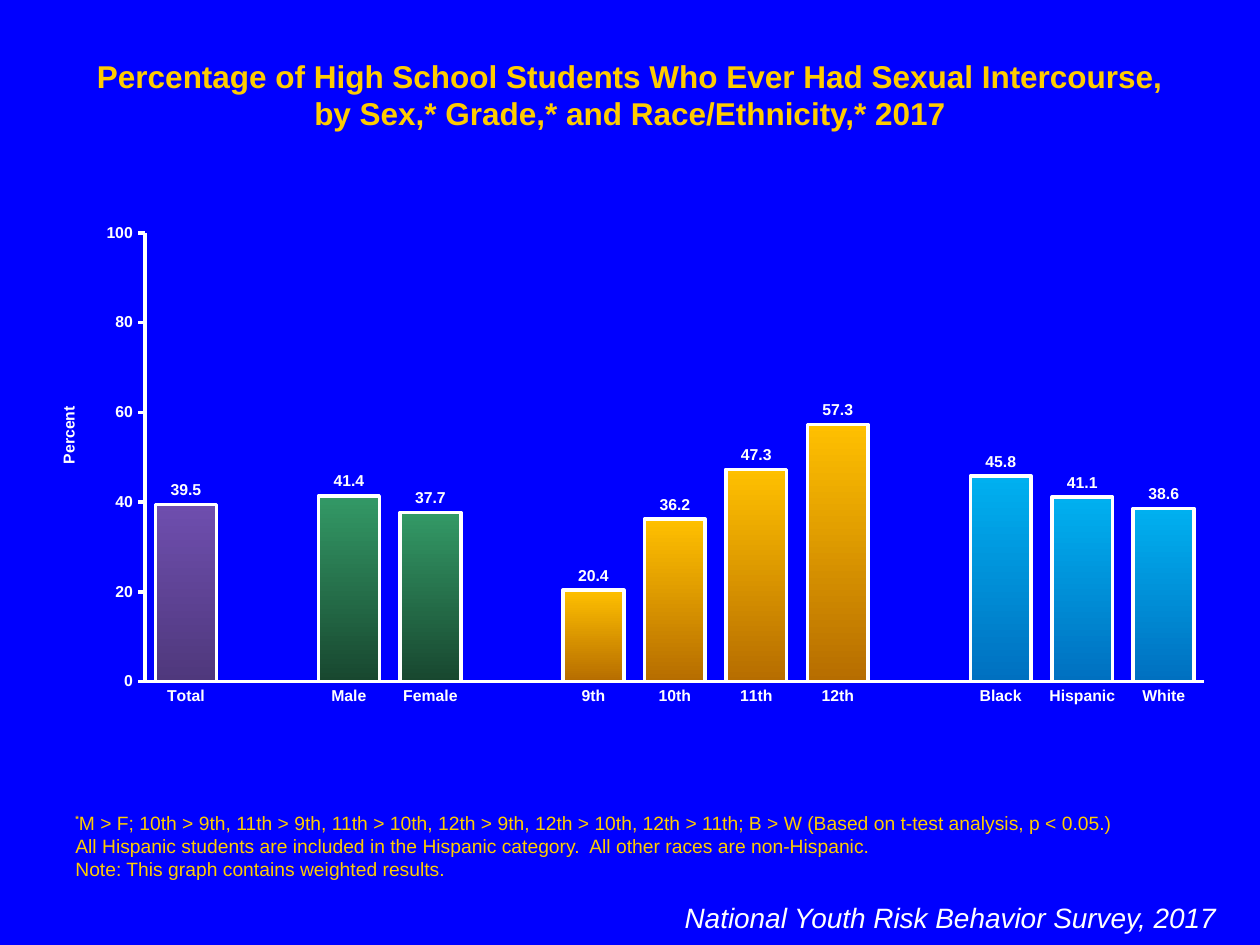
"""Build a slide with a column chart of survey percentages by student group."""
import lxml.etree
import pptx
import pptx.chart.data
import pptx.dml.color
import pptx.enum.chart
import pptx.enum.text
import pptx.oxml.ns
import pptx.util

FONT = "Arial"
WHITE, GOLD, BLUE = "FFFFFF", "FFCC00", "0000FF"
TITLE = ("Percentage of High School Students Who Ever Had Sexual Intercourse, "
         "by Sex,* Grade,* and Race/Ethnicity,* 2017")
NOTES = [
    "M > F; 10th > 9th, 11th > 9th, 11th > 10th, 12th > 9th, 12th > 10th, "
    "12th > 11th; B > W (Based on t-test analysis, p < 0.05.)",
    "All Hispanic students are included in the Hispanic category.  All other races are non-Hispanic.",
    "Note: This graph contains weighted results.",
]
SURVEY = "National Youth Risk Behavior Survey, 2017"
GROUPS = [
    (("6E4EAE", "4F387C"), [("Total", 39.5)]),
    (("339966", "18472F"), [("Male", 41.4), ("Female", 37.7)]),
    (("FFC000", "B66D00"), [("9th", 20.4), ("10th", 36.2), ("11th", 47.3), ("12th", 57.3)]),
    (("00B0F0", "0070C0"), [("Black", 45.8), ("Hispanic", 41.1), ("White", 38.6)]),
]
PLOT_LAYOUT = {"layoutTarget": "inner", "xMode": "edge", "yMode": "edge",
               "x": 0.095, "y": 0.04, "w": 0.885, "h": 0.895}
AXIS_TITLE_LAYOUT = {"xMode": "edge", "yMode": "edge", "x": 0.02, "y": 0.38}


def color(value):
    return pptx.dml.color.RGBColor.from_string(value)


def style(font, size, value, bold=False, italic=False):
    font.name, font.size = FONT, pptx.util.Pt(size)
    font.bold, font.italic = bold, italic
    font.color.rgb = color(value)


def white_line(line):
    line.color.rgb = color(WHITE)
    line.width = pptx.util.Pt(2)


def set_layout(parent, index, settings):
    """Give a chart element a manual layout."""
    for old in parent.findall(pptx.oxml.ns.qn("c:layout")):
        parent.remove(old)
    layout = lxml.etree.Element(pptx.oxml.ns.qn("c:layout"))
    manual = lxml.etree.SubElement(layout, pptx.oxml.ns.qn("c:manualLayout"))
    for name, value in settings.items():
        lxml.etree.SubElement(manual, pptx.oxml.ns.qn("c:" + name)).set("val", str(value))
    parent.insert(index, layout)


def add_text(page, place, lines, size, value, align, bold=False, italic=False):
    """Add a text box with one paragraph a line."""
    frame = page.shapes.add_textbox(*map(pptx.util.Inches, place)).text_frame
    frame.word_wrap = True
    frame.text = "\n".join(lines)
    for para in frame.paragraphs:
        para.alignment = align
        for span in para.runs:
            style(span.font, size, value, bold, italic)
    return frame


def add_notes(page):
    """Add the footnotes, led by a raised asterisk."""
    left = pptx.enum.text.PP_ALIGN.LEFT
    frame = add_text(page, (0.5, 6.75, 9, 0.29), ["*"] + NOTES[1:], 11, GOLD, left)
    frame.vertical_anchor = pptx.enum.text.MSO_ANCHOR.BOTTOM
    para = frame.paragraphs[0]
    star = para.runs[0]
    style(star.font, 9, GOLD, bold=True)
    star.font._element.set("baseline", "50000")
    span = para.add_run()
    span.text = NOTES[0]
    style(span.font, 11, GOLD)


def style_axes(chart):
    """Format both axes and the value axis title."""
    marks = pptx.enum.chart.XL_TICK_MARK
    axes = ((chart.category_axis, marks.NONE), (chart.value_axis, marks.OUTSIDE))
    for axis, mark in axes:
        axis.major_tick_mark, axis.minor_tick_mark = mark, marks.NONE
        axis.has_major_gridlines = False
        white_line(axis.format.line)
        style(axis.tick_labels.font, 9, WHITE, bold=True)
    scale = chart.value_axis
    scale.minimum_scale, scale.maximum_scale, scale.major_unit = 0, 100, 20
    frame = scale.axis_title.text_frame
    frame.text = "Percent"
    style(frame.paragraphs[0].runs[0].font, 9, WHITE, bold=True)
    set_layout(scale.axis_title._element, 1, AXIS_TITLE_LAYOUT)


def add_chart(page):
    """Add the columns, leaving an empty category between groups."""
    columns = []
    for gradient, bars in GROUPS:
        if columns:
            columns.append(("", None, None))
        columns += [(name, value, gradient) for name, value in bars]
    data = pptx.chart.data.CategoryChartData(number_format="General")
    data.categories = [name for name, _, _ in columns]
    data.add_series("Series 1", [value for _, value, _ in columns])
    place = map(pptx.util.Inches, (0.25, 1.69, 9.5, 3.98))
    kind = pptx.enum.chart.XL_CHART_TYPE.COLUMN_CLUSTERED
    chart = page.shapes.add_chart(kind, *place, data).chart
    chart.has_legend = chart.has_title = False
    style(chart.font, 18, WHITE)
    style_axes(chart)
    set_layout(chart._chartSpace.chart.plotArea, 0, PLOT_LAYOUT)

    plot = chart.plots[0]
    plot.gap_width, plot.overlap, plot.vary_by_categories = 34, 100, False
    series = plot.series[0]
    series.format.fill.solid()
    series.format.fill.fore_color.rgb = color("26CA59")
    white_line(series.format.line)
    labels = series.data_labels
    labels.show_value = True
    labels.number_format, labels.number_format_is_linked = "#,##0.0", False
    labels.position = pptx.enum.chart.XL_LABEL_POSITION.OUTSIDE_END
    style(labels.font, 9, WHITE, bold=True)
    for index, (_, _, gradient) in enumerate(columns):
        if gradient:
            look = series.points[index].format
            look.fill.gradient()
            look.fill.gradient_angle = 270
            for stop, value, position in zip(look.fill.gradient_stops, gradient, (0, 1)):
                stop.color.rgb, stop.position = color(value), position
            white_line(look.line)


def main():
    deck = pptx.Presentation()
    deck.slide_width, deck.slide_height = pptx.util.Inches(10), pptx.util.Inches(7.5)
    page = deck.slides.add_slide(deck.slide_layouts[6])
    page.background.fill.solid()
    page.background.fill.fore_color.rgb = color(BLUE)
    align = pptx.enum.text.PP_ALIGN
    add_text(page, (0.5, 0.4, 9, 0.7), [TITLE], 18, GOLD, align.CENTER, bold=True)
    add_notes(page)
    add_text(page, (4.25, 7.1, 5.5, 0.4), [SURVEY], 16, WHITE, align.RIGHT, italic=True)
    add_chart(page)
    deck.save("out.pptx")


if __name__ == "__main__":
    main()
